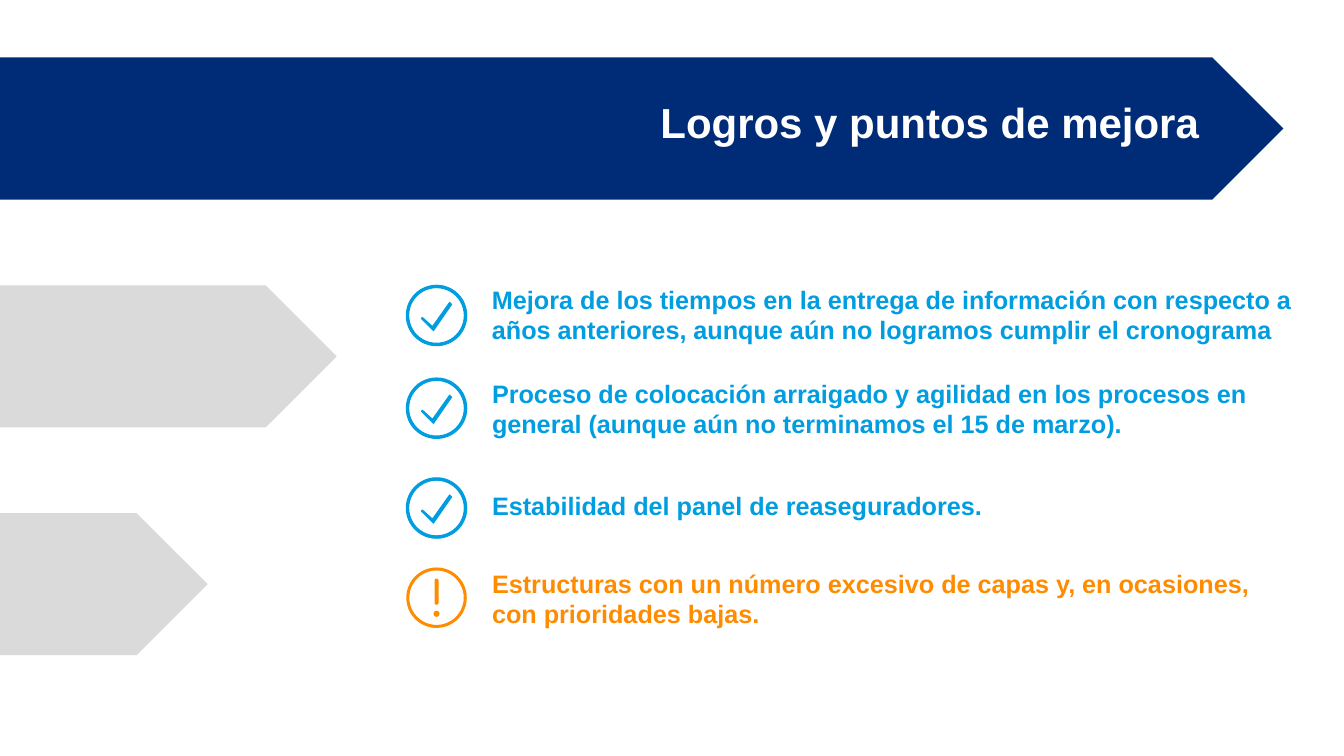
"""Build the slide of achievements and points to improve."""
from pptx import Presentation
from pptx.dml.color import RGBColor
from pptx.enum.shapes import MSO_SHAPE
from pptx.enum.text import MSO_ANCHOR, PP_ALIGN
from pptx.util import Inches, Pt

PENTAGON, DONUT = MSO_SHAPE.PENTAGON, MSO_SHAPE.DONUT
OVAL, ROUNDED = MSO_SHAPE.OVAL, MSO_SHAPE.ROUNDED_RECTANGLE
TOP, LEFT = MSO_ANCHOR.TOP, PP_ALIGN.LEFT

TITLE = "Logros y puntos de mejora"
COLORS = {"navy": "002C77", "gray": "DADADA", "white": "FFFFFF",
          "achievement": "009DE0", "warning": "FF8C00"}
FONT = "Arial"
WIDTH, HEIGHT = 13.33, 7.5

BANNER_HEIGHT = 1.41
BANNERS = [(0.57, 12.73, "navy"), (2.83, 3.34, "gray"), (5.09, 2.06, "gray")]

ICON_LEFT, ICON_SIZE = 4.03, 0.6
TEXT_LEFT, LINE_HEIGHT = 4.88, 0.305
POINTS = [
    ("achievement", 2.83, 2.82, 8.03, 2,
     "Mejora de los tiempos en la entrega de información con respecto a "
     "años anteriores, aunque aún no logramos cumplir el cronograma"),
    ("achievement", 3.75, 3.75, 7.82, 2,
     "Proceso de colocación arraigado y agilidad en los procesos en general "
     "(aunque aún no terminamos el 15 de marzo)."),
    ("achievement", 4.74, 4.86, 7.82, 1,
     "Estabilidad del panel de reaseguradores."),
    ("warning", 5.63, 5.64, 7.82, 2,
     "Estructuras con un número excesivo de capas y, en ocasiones, "
     "con prioridades bajas."),
]
CHECK = [(0.27, 0.45), (0.15, 0.33), (0.16, 0.32), (0.26, 0.41),
         (0.43, 0.17), (0.45, 0.19)]


def color(name):
    return RGBColor.from_string(COLORS[name])


def paint(shape, fill, line_width=0):
    shape.shadow.inherit = False
    shape.fill.solid()
    shape.fill.fore_color.rgb = color(fill)
    if line_width:
        shape.line.color.rgb = color(fill)
        shape.line.width = Pt(line_width)
    else:
        shape.line.fill.background()


def add_preset(shapes, preset, box, fill, line_width=0):
    shape = shapes.add_shape(preset, *map(Inches, box))
    paint(shape, fill, line_width)
    return shape


def write(shape, text, size, fill):
    frame = shape.text_frame
    frame.word_wrap = True
    frame.vertical_anchor = TOP
    frame.margin_left = frame.margin_right = 0
    frame.margin_top = frame.margin_bottom = 0
    frame.text = text
    paragraph = frame.paragraphs[0]
    paragraph.alignment = LEFT
    font = paragraph.runs[0].font
    font.name, font.size, font.bold = FONT, Pt(size), True
    font.color.rgb = color(fill)
    return paragraph


def add_icon(slide, kind, top):
    shapes = slide.shapes.add_group_shape().shapes
    is_check = kind == "achievement"
    ring = add_preset(shapes, DONUT, (ICON_LEFT, top, ICON_SIZE, ICON_SIZE),
                      kind, 0.75 if is_check else 0)
    ring.adjustments[0] = 0.04 if is_check else 0.05
    if is_check:
        corners = [(Inches(ICON_LEFT + x), Inches(top + y)) for x, y in CHECK]
        builder = shapes.build_freeform(*corners[0])
        builder.add_line_segments(corners[1:])
        paint(builder.convert_to_shape(), kind, 0.75)
    else:
        center = ICON_LEFT + ICON_SIZE / 2
        bar = add_preset(shapes, ROUNDED,
                         (center - 0.02, top + 0.11, 0.04, 0.26), kind)
        bar.adjustments[0] = 0.5
        add_preset(shapes, OVAL, (center - 0.03, top + 0.43, 0.06, 0.06), kind)


def main():
    presentation = Presentation()
    presentation.slide_width = Inches(WIDTH)
    presentation.slide_height = Inches(HEIGHT)
    slide = presentation.slides.add_slide(presentation.slide_layouts[5])

    for top, width, fill in BANNERS:
        add_preset(slide.shapes, PENTAGON, (0, top, width, BANNER_HEIGHT), fill)

    for kind, icon_top, text_top, width, lines, text in POINTS:
        add_icon(slide, kind, icon_top)
        box = (TEXT_LEFT, text_top, width, lines * LINE_HEIGHT)
        write(slide.shapes.add_textbox(*map(Inches, box)), text, 18, kind)

    title = slide.shapes.title
    title.left, title.top = Inches(6.55), Inches(1.05)
    title.width, title.height = Inches(5.53), Inches(0.54)
    write(title, TITLE, 30, "white").line_spacing = 0.8
    slide.shapes.element.append(title.element)

    presentation.save("out.pptx")


if __name__ == "__main__":
    main()
